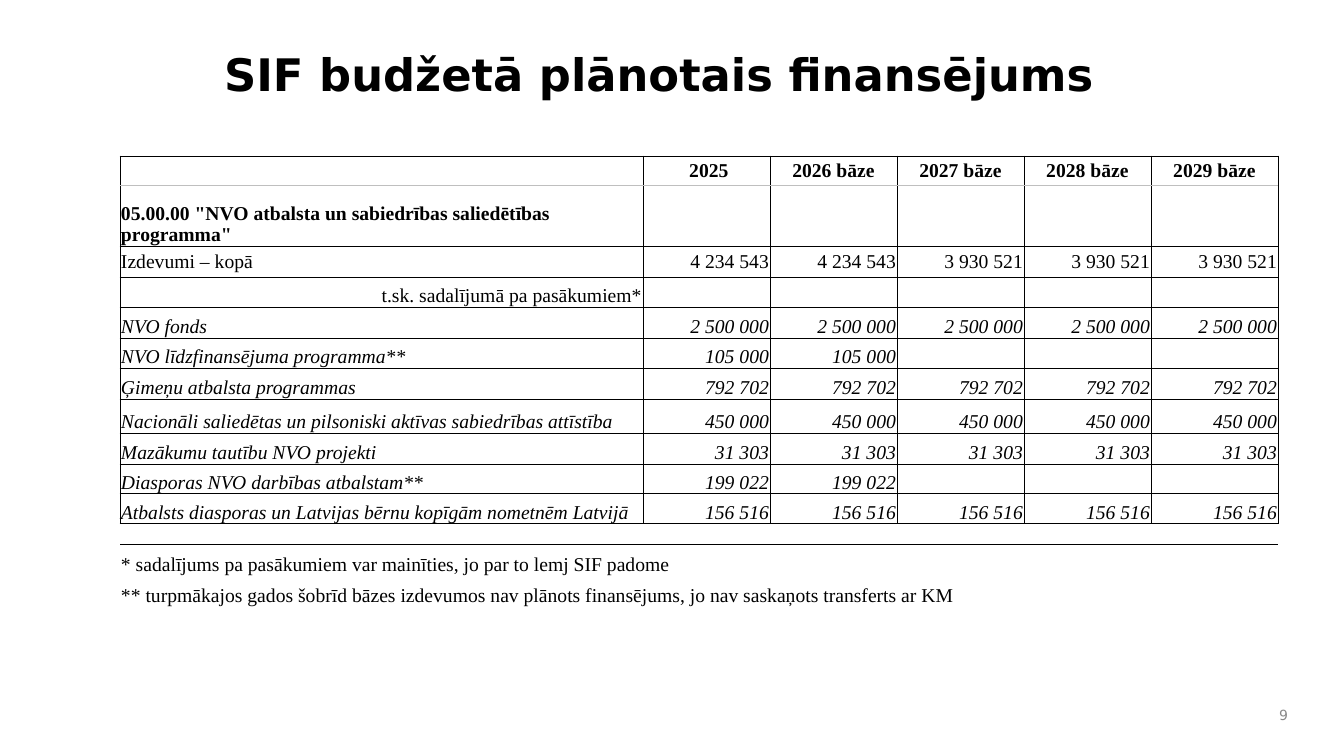
"""Builds the slide with the funding table planned in the SIF budget."""
from lxml.etree import SubElement as Sub
from pptx import Presentation as Deck
from pptx.dml.color import RGBColor as Rgb
from pptx.enum.text import MSO_ANCHOR as Anchor, MSO_AUTO_SIZE as Fit, PP_ALIGN as Align
from pptx.oxml.ns import qn
from pptx.util import Pt

PX = 914400 / 100.8
theme = {
    "ink": "000000", "rule": "BFBFBF", "page": "898989",
    "sans": "DejaVu Sans", "serif": "Times New Roman",
    "head": 32, "cell": 14, "gap": 10, "note": 10,
}


def px(*nums):
    return [round(num * PX) for num in nums]


def write(frame, text, look, **font):
    """Fill a text frame and format it."""
    para = frame.paragraphs[0]
    para.alignment = look["align"]
    if not text:
        Sub(para._p, qn("a:endParaRPr"), sz=str(theme["gap"] * 100))
        return
    run = para.add_run()
    run.text = text
    run.font.color.rgb = Rgb.from_string(theme[look["color"]])
    for key, val in font.items():
        setattr(run.font, key, val)


deck = Deck()
deck.slide_width, deck.slide_height = px(1344, 756)
slide = deck.slides.add_slide(deck.slide_layouts[5])

title = slide.shapes.title
title.left, title.top, title.width, title.height = px(214, 42, 1063, 114)
page = slide.shapes.add_textbox(*px(1237, 698, 61, 33))
labels = [
    (title, "SIF budžetā plānotais finansējums", Anchor.TOP, Align.LEFT, "ink", "head", True),
    (page, "9", Anchor.MIDDLE, Align.RIGHT, "page", "note", False),
]
for box, text, anchor, align, color, size, bold in labels:
    frame = box.text_frame
    form = {"word_wrap": True, "auto_size": Fit.NONE, "vertical_anchor": anchor}
    for key, val in form.items():
        setattr(frame, key, val)
    write(frame, text, {"align": align, "color": color},
          name=theme["sans"], size=Pt(theme[size]), bold=bold)

years = [" 2025"] + [f"{year} bāze" for year in range(2026, 2030)]
rows = [
    (29, "", years),
    (61, '05.00.00 "NVO atbalsta un sabiedrības saliedētības programma"', []),
    (31, "Izdevumi – kopā", ["4 234 543"] * 2 + ["3 930 521"] * 3),
    (30, "t.sk. sadalījumā pa pasākumiem*", []),
    (31, "NVO fonds", ["2 500 000"] * 5),
    (30, "NVO līdzfinansējuma programma**", ["105 000"] * 2),
    (31, "Ģimeņu atbalsta programmas", ["792 702"] * 5),
    (34, "Nacionāli saliedētas un pilsoniski aktīvas sabiedrības attīstība", ["450 000"] * 5),
    (31, "Mazākumu tautību NVO projekti", ["31 303"] * 5),
    (30, "Diasporas NVO darbības atbalstam**", ["199 022"] * 2),
    (30, "Atbalsts diasporas un Latvijas bērnu kopīgām nometnēm Latvijā", ["156 516"] * 5),
    (21, "", []),
    (31, "* sadalījums pa pasākumiem var mainīties, jo par to lemj SIF padome", []),
    (31, "** turpmākajos gados šobrīd bāzes izdevumos nav plānots finansējums, "
         "jo nav saskaņots transferts ar KM", []),
]
HEAD, GROUP, TOTAL, SPLIT, FIRST, LAST = 0, 1, 2, 3, 4, 10
widths = [523] + [127] * 5
high = sum(row[0] for row in rows)
table = slide.shapes.add_table(len(rows), len(widths), *px(120, 156, sum(widths), high)).table
table.first_row = table.horz_banding = False
table._tbl.tblPr[0].text = "{2D5ABB26-0587-4C30-8999-92F81FD0307C}"
for col, wide in zip(table.columns, widths):
    col.width = px(wide)[0]

inset, none = px(1, 0)
for r, (tall, label, sums) in enumerate(rows):
    table.rows[r].height = px(tall)[0]
    texts = [label] + sums + [""] * (5 - len(sums))
    for c, text in enumerate(texts):
        cell = table.cell(r, c)
        form = {
            "margin_left": inset, "margin_right": inset,
            "margin_top": inset, "margin_bottom": none,
            "vertical_anchor": Anchor.MIDDLE if r in (HEAD, TOTAL) else Anchor.BOTTOM,
        }
        for key, val in form.items():
            setattr(cell, key, val)
        align = Align.CENTER if r == HEAD else Align.RIGHT if c or r == SPLIT else Align.LEFT
        write(cell.text_frame, text, {"align": align, "color": "ink"},
              name=theme["serif"], size=Pt(theme["cell"]),
              bold=r <= GROUP, italic=FIRST <= r <= LAST)
        sides = "LRTB" if r <= LAST else "T" if r == LAST + 1 else ""
        for side in sides:
            pale = (r, side) in ((HEAD, "B"), (GROUP, "T"))
            line = Sub(cell._tc.get_or_add_tcPr(), qn(f"a:ln{side}"), w=str(Pt(0.5)))
            fill = Sub(line, qn("a:solidFill"))
            Sub(fill, qn("a:srgbClr"), val=theme["rule" if pale else "ink"])
        cell.fill.background()

for r, end in ((LAST + 2, 2), (LAST + 3, 5)):
    table.cell(r, 0).merge(table.cell(r, end))

deck.save("out.pptx")
